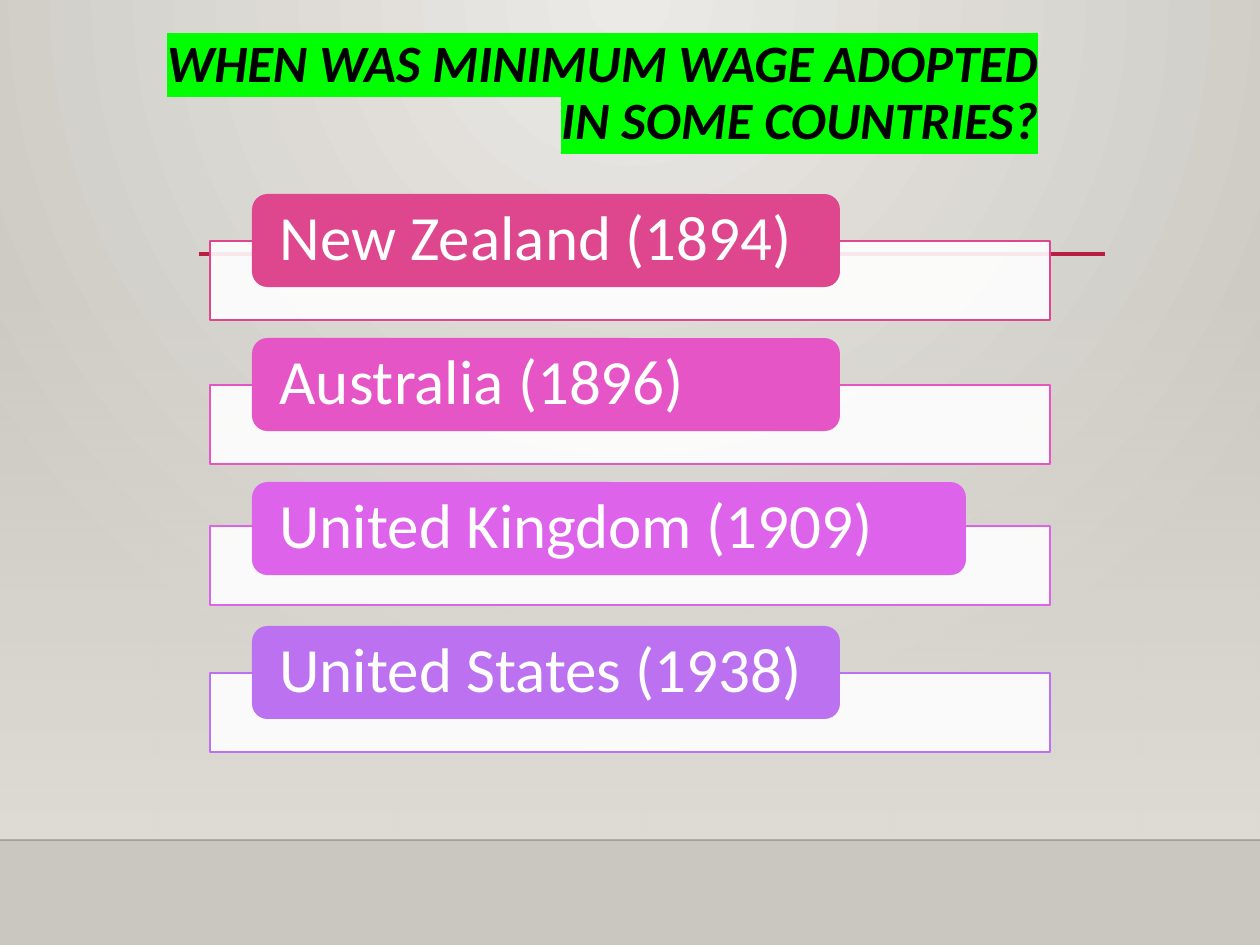
from lxml.etree import SubElement
from pptx import Presentation
from pptx.dml.color import RGBColor
from pptx.enum.shapes import MSO_CONNECTOR, MSO_SHAPE
from pptx.enum.text import MSO_ANCHOR, MSO_AUTO_SIZE, PP_ALIGN
from pptx.oxml.ns import qn
from pptx.util import Emu, Pt

COUNTRIES = [
    ("New Zealand (1894)", "DE478E", 588, 47),
    ("Australia (1896)", "E555C6", 588, 47),
    ("United Kingdom (1909)", "DD63EB", 714, 44),
    ("United States (1938)", "BC72F0", 588, 47),
]
FIRST_TOP = 194
ROW_PITCH = 144


def px(length):
    return Emu(round(length * 914400 / 126))


def colour(hex_text):
    return RGBColor.from_string(hex_text)


def set_alpha(colour_element, percent):
    SubElement(colour_element, qn("a:alpha"), val=str(percent * 1000))


def set_gradient(fill, *hex_colours):
    fill.gradient()
    for stop, hex_text in zip(fill.gradient_stops, hex_colours):
        stop.color.rgb = colour(hex_text)


def set_background(slide):
    set_gradient(slide.background.fill, "ECEAE7", "CAC7C1")
    gradient = slide.element.find(".//" + qn("a:gradFill"))
    gradient.remove(gradient.find(qn("a:lin")))
    circle = SubElement(gradient, qn("a:path"), path="circle")
    SubElement(circle, qn("a:fillToRect"), l="43000", t="0", r="43000", b="100000")


def add_box(slide, preset, left, top, width, height):
    box = slide.shapes.add_shape(preset, px(left), px(top), px(width), px(height))
    box.shadow.inherit = False
    box.line.fill.background()
    return box


def add_wall(slide):
    wall = add_box(slide, MSO_SHAPE.RECTANGLE, 0, 277, 1260, 563)
    set_gradient(wall.fill, "DFDBD5", "DFDBD5")
    wall.fill.gradient_angle = 270
    set_alpha(wall.element.find(".//" + qn("a:srgbClr")), 0)


def add_rule(slide, left, right, y, hex_text, weight, alpha=100):
    rule = slide.shapes.add_connector(
        MSO_CONNECTOR.STRAIGHT, px(left), px(y), px(right), px(y)
    )
    rule.line.color.rgb = colour(hex_text)
    rule.line.width = Pt(weight)
    if alpha < 100:
        set_alpha(rule.element.find(".//" + qn("a:srgbClr")), alpha)
    SubElement(rule.element.spPr, qn("a:effectLst"))


def write_text(frame, text, size, hex_text, align=PP_ALIGN.LEFT,
               anchor=MSO_ANCHOR.MIDDLE, bold=False, italic=False, highlight=None):
    frame.word_wrap = True
    frame.auto_size = MSO_AUTO_SIZE.NONE
    frame.vertical_anchor = anchor
    paragraph = frame.paragraphs[0]
    paragraph.alignment = align
    paragraph.line_spacing = 0.9
    run = paragraph.add_run()
    run.text = text
    run.font.name = "Calibri"
    run.font.size = Pt(size)
    run.font.bold = bold
    run.font.italic = italic
    run.font.color.rgb = colour(hex_text)
    if highlight:
        properties = run.font._element
        mark = SubElement(properties, qn("a:highlight"))
        SubElement(mark, qn("a:srgbClr"), val=highlight)
        properties.find(qn("a:solidFill")).addnext(mark)


def add_title(slide):
    title = slide.shapes.title
    title.left, title.top, title.width, title.height = map(px, (145, 31, 906, 145))
    write_text(title.text_frame, "WHEN WAS MINIMUM WAGE ADOPTED IN SOME COUNTRIES?",
               30, "000000", align=PP_ALIGN.RIGHT, anchor=MSO_ANCHOR.TOP,
               bold=True, italic=True, highlight="00FF00")


def add_country(slide, top, country, accent, label_width, panel_offset):
    panel = add_box(slide, MSO_SHAPE.RECTANGLE, 210, top + panel_offset, 840, 79)
    panel.fill.solid()
    panel.fill.fore_color.rgb = colour("FFFFFF")
    set_alpha(panel.element.find(".//" + qn("a:srgbClr")), 90)
    panel.line.color.rgb = colour(accent)
    panel.line.width = Pt(0.75)

    label = add_box(slide, MSO_SHAPE.ROUNDED_RECTANGLE, 252, top, label_width, 93)
    label.fill.solid()
    label.fill.fore_color.rgb = colour(accent)
    frame = label.text_frame
    frame.margin_left = frame.margin_right = px(23)
    frame.margin_top = frame.margin_bottom = 0
    write_text(frame, country, 36, "FFFFFF")


def main():
    presentation = Presentation()
    presentation.slide_width, presentation.slide_height = px(1260), px(945)
    slide = presentation.slides.add_slide(presentation.slide_layouts[5])
    set_background(slide)
    add_wall(slide)
    add_rule(slide, 0, 1260, 840, "000001", 1, alpha=20)
    add_rule(slide, 199, 1105, 254, "B71E42", 2.5)
    add_title(slide)
    for row, country in enumerate(COUNTRIES):
        add_country(slide, FIRST_TOP + row * ROW_PITCH, *country)
    presentation.save("out.pptx")


if __name__ == "__main__":
    main()
